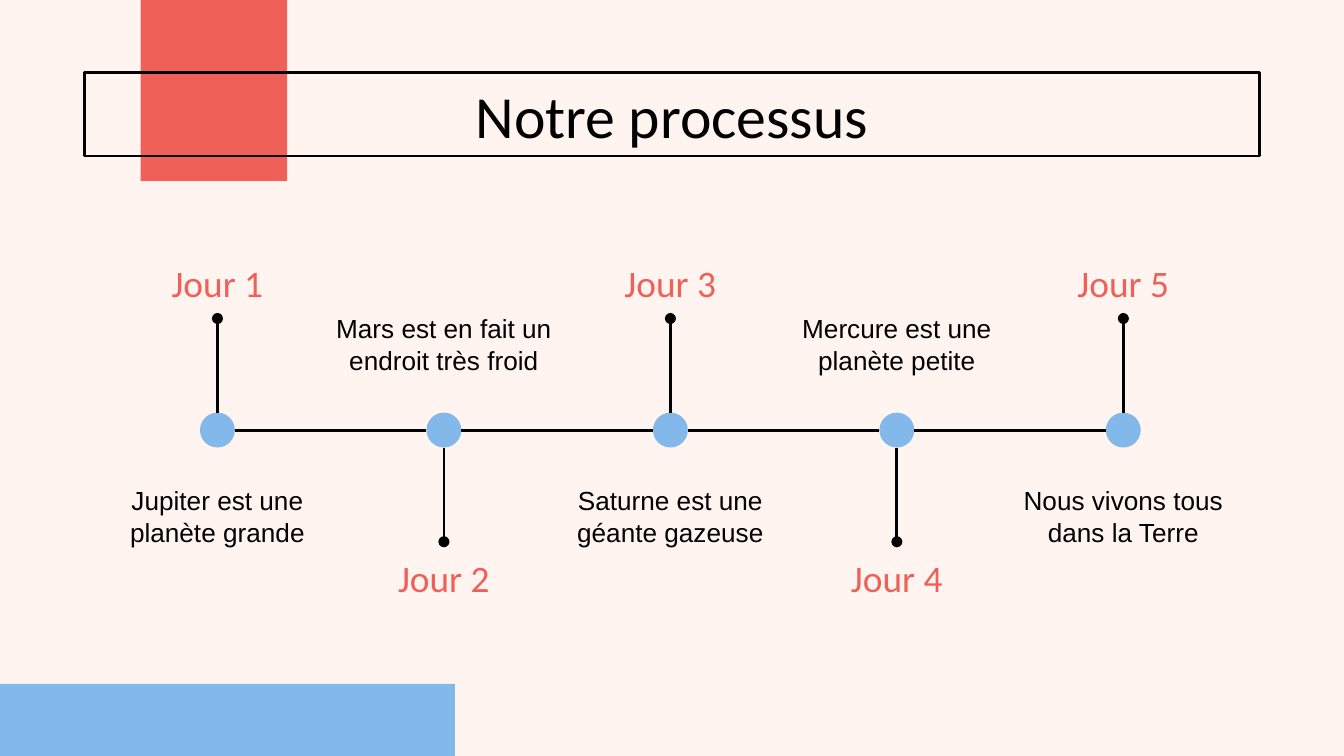
from lxml import etree
from pptx import Presentation
from pptx import util as u
from pptx.dml.color import RGBColor
from pptx.enum import shapes, text
from pptx.oxml.ns import qn

COLORS = {"bg": "FFF4EF", "coral": "EF6058", "blue": "83B9EA", "ink": "000000"}


def write(sp, words, size, font, color, inset=0):
    tf = sp.text_frame
    tf.word_wrap = True
    tf.auto_size = text.MSO_AUTO_SIZE.NONE
    tf.vertical_anchor = text.MSO_ANCHOR.MIDDLE
    tf.margin_left = tf.margin_right = tf.margin_top = tf.margin_bottom = u.Cm(inset)
    p = tf.paragraphs[0]
    p.alignment = text.PP_ALIGN.CENTER
    r = p.add_run()
    r.text = words
    r.font.size = u.Pt(size)
    r.font.name = font
    r.font.color.rgb = RGBColor.from_string(COLORS[color])


def connect(x1, y1, x2, y2, dot=False):
    line = s.shapes.add_connector(
        shapes.MSO_CONNECTOR.STRAIGHT, u.Cm(x1), u.Cm(y1), u.Cm(x2), u.Cm(y2))
    line.line.color.rgb = RGBColor.from_string(COLORS["ink"])
    line.line.width = u.Pt(1.5)
    if dot:
        etree.SubElement(line.line._get_or_add_ln(), qn("a:tailEnd"), type="oval")
    etree.SubElement(line.element.spPr, qn("a:effectLst"))


prs = Presentation()
prs.slide_width, prs.slide_height = u.Cm(25.4), u.Cm(14.29)
s = prs.slides.add_slide(prs.slide_layouts[5])
s.background.fill.solid()
s.background.fill.fore_color.rgb = RGBColor.from_string(COLORS["bg"])

STEP, FIRST, AXIS, RADIUS, STEM = 4.28, 4.11, 8.13, 0.33, 1.78
RECT, OVAL = shapes.MSO_SHAPE.RECTANGLE, shapes.MSO_SHAPE.OVAL
filled = [
    (RECT, 2.66, 0, 2.77, 3.42, "coral"),
    (RECT, 0, 12.93, 8.6, 1.36, "blue"),
]
for i in range(5):
    filled.append((OVAL, FIRST + i * STEP - RADIUS, AXIS - RADIUS,
                   2 * RADIUS, 2 * RADIUS, "blue"))
for kind, x, y, w, h, color in filled:
    sp = s.shapes.add_shape(kind, u.Cm(x), u.Cm(y), u.Cm(w), u.Cm(h))
    sp.shadow.inherit = False
    sp.fill.solid()
    sp.fill.fore_color.rgb = RGBColor.from_string(COLORS[color])
    sp.line.fill.background()

title = s.shapes.title
title.element.getparent().append(title.element)
title.left, title.top, title.width, title.height = u.Cm(1.6), u.Cm(1.37), u.Cm(22.2), u.Cm(1.58)
title.line.color.rgb = RGBColor.from_string(COLORS["ink"])
title.line.width = u.Pt(1.5)
write(title, "Notre processus", 32, "Calibri", "ink", 0.25)

days = [
    ("Jour 1", "Jupiter est une planète grande", 3.91),
    ("Jour 2", "Mars est en fait un endroit très froid", 4.29),
    ("Jour 3", "Saturne est une géante gazeuse", 3.91),
    ("Jour 4", "Mercure est une planète petite", 4.29),
    ("Jour 5", "Nous vivons tous dans la Terre", 4.29),
]
for i, (day, fact, width) in enumerate(days):
    x = FIRST + i * STEP
    if i % 2 == 0:
        side, day_top, fact_top = -1, 4.67, 9.02
    else:
        side, day_top, fact_top = 1, 10.24, 5.77
    for words, top, height, size, font, color in (
        (day, day_top, 1.35, 20, "Calibri", "coral"),
        (fact, fact_top, 1.47, 14, "Arial", "ink"),
    ):
        box = s.shapes.add_textbox(u.Cm(x - width / 2), u.Cm(top), u.Cm(width), u.Cm(height))
        write(box, words, size, font, color)
    edge = AXIS + side * RADIUS
    connect(x, edge, x, edge + side * STEM, dot=True)
    if i < len(days) - 1:
        connect(x + RADIUS, AXIS, x + STEP - RADIUS, AXIS)

prs.save("out.pptx")
